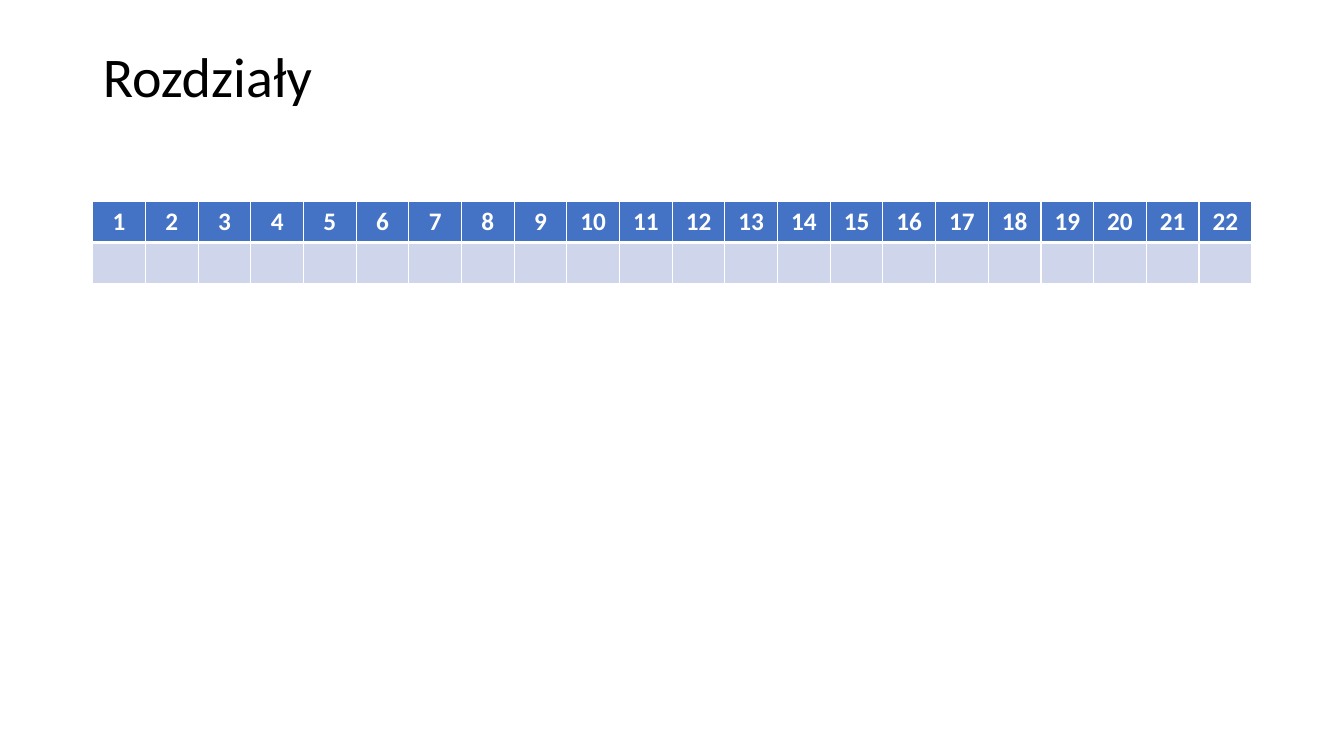
from lxml.etree import SubElement
from pptx import Presentation
from pptx.dml.color import RGBColor
from pptx.enum.text import MSO_ANCHOR as Anchor, PP_ALIGN as Align
from pptx.oxml.ns import qn
from pptx.util import Inches, Pt

FONT = "Calibri"
WHITE = "FFFFFF"
HEADER_FILL = "4472C4"
BODY_FILL = "CFD5EA"
CHAPTER_COUNT = 22
LEFT, WIDTH = 0.92, 11.5
ROW_HEIGHT = 0.405


def set_color(color_format, hex_color):
    """Apply a hex colour to a font colour or a solid fill's foreground."""
    color_format.rgb = RGBColor.from_string(hex_color)


def style_paragraph(paragraph, size, color, bold, align):
    """Set the font and alignment of a paragraph."""
    paragraph.alignment = align
    font = paragraph.font
    font.name, font.size, font.bold = FONT, Pt(size), bold
    set_color(font.color, color)


def add_title(slide, text):
    """Place and format the slide title."""
    title = slide.shapes.title
    title.left, title.top = Inches(LEFT), Inches(0.4)
    title.width, title.height = Inches(WIDTH), Inches(0.78)
    frame = title.text_frame
    frame.text = text
    frame.vertical_anchor = Anchor.MIDDLE
    heading = frame.paragraphs[0]
    heading.line_spacing = 0.9
    style_paragraph(heading, 40, "000000", False, Align.LEFT)


def style_cell(cell, fill, top_width, bottom_width):
    """Give a cell its white borders and fill colour."""
    properties = cell._tc.get_or_add_tcPr()
    widths = {"L": 1, "R": 1, "T": top_width, "B": bottom_width}
    for side, width in widths.items():
        border = SubElement(properties, qn(f"a:ln{side}"), w=str(Pt(width)))
        solid = SubElement(border, qn("a:solidFill"))
        SubElement(solid, qn("a:srgbClr"), val=WHITE)
    cell.fill.solid()
    set_color(cell.fill.fore_color, fill)


def add_chapter_table(slide):
    """Add the row of chapter numbers above a row of empty cells."""
    table = slide.shapes.add_table(
        2, CHAPTER_COUNT, Inches(LEFT), Inches(2), Inches(WIDTH), Inches(2 * ROW_HEIGHT)
    ).table
    for column in table.columns:
        column.width = Inches(WIDTH / CHAPTER_COUNT)
    for index in range(CHAPTER_COUNT):
        header, body = table.cell(0, index), table.cell(1, index)
        header.text = str(index + 1)
        style_cell(header, HEADER_FILL, 1, 3)
        style_cell(body, BODY_FILL, 3, 1)
        for cell in (header, body):
            style_paragraph(cell.text_frame.paragraphs[0], 18, WHITE, True, Align.CENTER)


def main():
    """Build and save the chapter slide."""
    presentation = Presentation()
    presentation.slide_width = Inches(13.33)
    presentation.slide_height = Inches(7.5)
    slide = presentation.slides.add_slide(presentation.slide_layouts[5])
    add_title(slide, "Rozdziały")
    add_chapter_table(slide)
    presentation.save("out.pptx")


if __name__ == "__main__":
    main()
